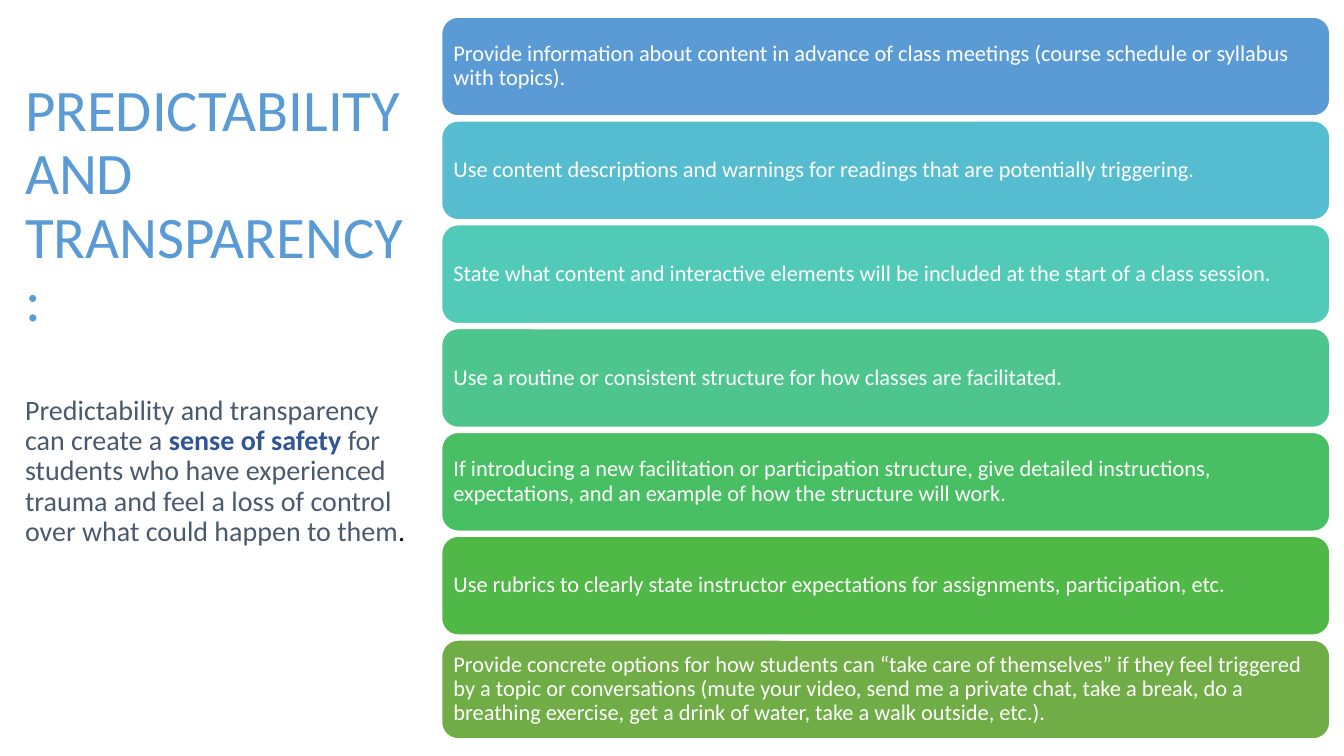
from dataclasses import dataclass

from pptx import Presentation
from pptx.dml.color import RGBColor
from pptx.enum.shapes import MSO_SHAPE
from pptx.enum.text import MSO_ANCHOR, PP_ALIGN
from pptx.slide import Slide
from pptx.util import Inches, Pt

ROUNDED = MSO_SHAPE.ROUNDED_RECTANGLE
TOP, MIDDLE = MSO_ANCHOR.TOP, MSO_ANCHOR.MIDDLE
LEFT = PP_ALIGN.LEFT

FONT = "Calibri"
BLUE = RGBColor(0x5B, 0x9B, 0xD5)
SLATE = RGBColor(0x49, 0x59, 0x6E)
NAVY = RGBColor(0x2F, 0x55, 0x97)
BLACK = RGBColor(0x00, 0x00, 0x00)
WHITE = RGBColor(0xFF, 0xFF, 0xFF)
CYAN = RGBColor(0x56, 0xBC, 0xD0)
TURQUOISE = RGBColor(0x52, 0xCA, 0xB8)
MINT = RGBColor(0x4D, 0xC5, 0x8D)
EMERALD = RGBColor(0x49, 0xBF, 0x64)
GREEN = RGBColor(0x50, 0xB8, 0x46)
OLIVE = RGBColor(0x70, 0xAD, 0x47)

CARD_LEFT, CARD_TOP = 4.38, 0.17
CARD_WIDTH, CARD_HEIGHT = 8.81, 0.98
CARD_PITCH = 1.03


@dataclass(frozen=True)
class TextRun:
    text: str
    color: RGBColor
    size: int
    bold: bool = False


@dataclass(frozen=True)
class Card:
    text: str
    fill: RGBColor


HEADING = [TextRun("PREDICTABILITY AND TRANSPARENCY:", BLUE, 42)]
EXPLANATION = [
    TextRun("Predictability and transparency can create a ", SLATE, 20),
    TextRun("sense of safety ", NAVY, 20, bold=True),
    TextRun("for students who have experienced trauma and feel a loss of "
            "control over what could happen to them", SLATE, 20),
    TextRun(".", BLACK, 20),
]
CARDS = [
    Card("Provide information about content in advance of class meetings "
         "(course schedule or syllabus with topics).", BLUE),
    Card("Use content descriptions and warnings for readings that are "
         "potentially triggering.", CYAN),
    Card("State what content and interactive elements will be included at "
         "the start of a class session.", TURQUOISE),
    Card("Use a routine or consistent structure for how classes are "
         "facilitated.", MINT),
    Card("If introducing a new facilitation or participation structure, give "
         "detailed instructions, expectations, and an example of how the "
         "structure will work.", EMERALD),
    Card("Use rubrics to clearly state instructor expectations for "
         "assignments, participation, etc.", GREEN),
    Card("Provide concrete options for how students can “take care of "
         "themselves” if they feel triggered by a topic or conversations "
         "(mute your video, send me a private chat, take a break, do a "
         "breathing exercise, get a drink of water, take a walk outside, "
         "etc.).", OLIVE),
]


def apply_format(target, values: dict) -> None:
    for name, value in values.items():
        setattr(target, name, value)


def write_paragraph(paragraph, runs: list[TextRun], space_before: int = 0) -> None:
    apply_format(paragraph, {"alignment": LEFT, "line_spacing": 0.9,
                             "space_before": Pt(space_before)})
    for text_run in runs:
        run = paragraph.add_run()
        run.text = text_run.text
        apply_format(run.font, {"name": FONT, "size": Pt(text_run.size),
                                "bold": text_run.bold})
        run.font.color.rgb = text_run.color


def add_introduction(slide: Slide) -> None:
    box = slide.shapes.add_textbox(Inches(0.15), Inches(0.72),
                                   Inches(4.01), Inches(6.02))
    frame = box.text_frame
    apply_format(frame, {"word_wrap": True, "vertical_anchor": TOP,
                         "margin_top": Inches(0.08)})
    write_paragraph(frame.paragraphs[0], HEADING)
    write_paragraph(frame.add_paragraph(), EXPLANATION, space_before=44)


def add_card(slide: Slide, card: Card, top: float) -> None:
    shape = slide.shapes.add_shape(ROUNDED, Inches(CARD_LEFT), Inches(top),
                                   Inches(CARD_WIDTH), Inches(CARD_HEIGHT))
    shape.shadow.inherit = False
    shape.fill.solid()
    shape.fill.fore_color.rgb = card.fill
    shape.line.color.rgb = WHITE
    shape.line.width = Pt(1)
    margin = Inches(0.07)
    apply_format(shape.text_frame, {
        "word_wrap": True, "vertical_anchor": MIDDLE,
        "margin_left": margin, "margin_right": margin,
        "margin_top": margin, "margin_bottom": margin,
    })
    write_paragraph(shape.text_frame.paragraphs[0],
                    [TextRun(card.text, WHITE, 16)])


def main() -> None:
    presentation = Presentation()
    presentation.slide_width = Inches(13.33)
    presentation.slide_height = Inches(7.5)
    slide = presentation.slides.add_slide(presentation.slide_layouts[6])

    # Heading and explanation on the left
    add_introduction(slide)

    # Stack of recommendations on the right
    for index, card in enumerate(CARDS):
        add_card(slide, card, CARD_TOP + index * CARD_PITCH)

    presentation.save("out.pptx")


if __name__ == "__main__":
    main()
